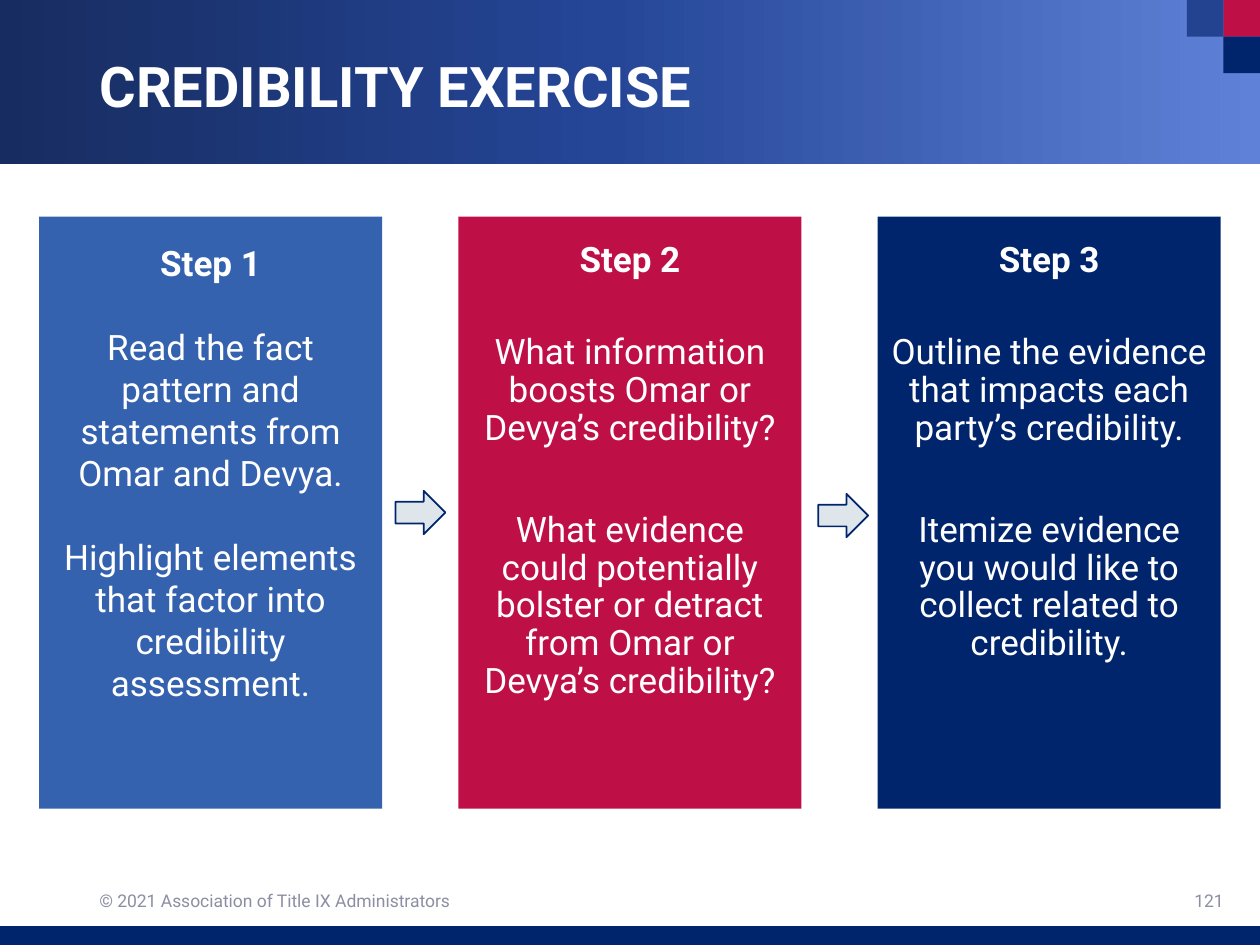
from copy import deepcopy
from dataclasses import dataclass

from pptx import Presentation
from pptx.dml.color import RGBColor
from pptx.enum.shapes import MSO_SHAPE
from pptx.enum.text import MSO_ANCHOR, MSO_AUTO_SIZE, PP_ALIGN
from pptx.oxml.ns import qn
from pptx.util import Pt

RECTANGLE, ARROW = MSO_SHAPE.RECTANGLE, MSO_SHAPE.RIGHT_ARROW
TOP, MIDDLE = MSO_ANCHOR.TOP, MSO_ANCHOR.MIDDLE
LEFT, CENTER, RIGHT = PP_ALIGN.LEFT, PP_ALIGN.CENTER, PP_ALIGN.RIGHT
NO_AUTOFIT = MSO_AUTO_SIZE.NONE

WHITE = RGBColor(0xFF, 0xFF, 0xFF)
NAVY = RGBColor(0x00, 0x25, 0x6D)
CRIMSON = RGBColor(0xBE, 0x10, 0x47)
BLUE = RGBColor(0x34, 0x62, 0xAE)
CORNER_BLUE = RGBColor(0x23, 0x42, 0x8F)
PALE = RGBColor(0xDF, 0xE6, 0xEB)
GREY = RGBColor(0x8C, 0x8E, 0xA3)
BAND_STOPS = (
    (0, RGBColor(0x17, 0x2C, 0x60)),
    (0.48, RGBColor(0x25, 0x46, 0x97)),
    (1, RGBColor(0x5F, 0x82, 0xD8)),
)

SLIDE_WIDTH, SLIDE_HEIGHT = 720, 540
CARD_WIDTH, CARD_HEIGHT, CARD_TOP = 196, 338.4, 123.8
CARD_PITCH = 239.6
CARD_LEFT = (SLIDE_WIDTH - 2 * CARD_PITCH - CARD_WIDTH) / 2
CORNER = 20.9
FOOTER_TOP, FOOTER_HEIGHT = 500.4, 28.8


@dataclass(frozen=True)
class Box:
    left: float
    top: float
    width: float
    height: float

    def lengths(self) -> tuple:
        return Pt(self.left), Pt(self.top), Pt(self.width), Pt(self.height)


@dataclass(frozen=True)
class Step:
    heading: str
    tasks: tuple
    fill: RGBColor
    line_spacing: float
    gaps: tuple


STEPS = (
    Step("Step 1",
         ("Read the fact pattern and statements from Omar and Devya.",
          "Highlight elements that factor into credibility assessment."),
         BLUE, 1.0, (24, 24)),
    Step("Step 2",
         ("What information boosts Omar or Devya’s credibility?",
          "What evidence could potentially bolster or detract from Omar or Devya’s credibility?"),
         CRIMSON, 0.9, (31.5, 36.6)),
    Step("Step 3",
         ("Outline the evidence that impacts each party’s credibility.",
          "Itemize evidence you would like to collect related to credibility."),
         NAVY, 0.9, (31.5, 36.6)),
)
ARROWS = (Box(226, 280.5, 28.5, 24.8), Box(467.6, 282.2, 28.5, 24.8))
CORNERS = (
    (Box(SLIDE_WIDTH - CORNER, 0, CORNER, CORNER), CRIMSON),
    (Box(SLIDE_WIDTH - 2 * CORNER, 0, CORNER, CORNER), CORNER_BLUE),
    (Box(SLIDE_WIDTH - CORNER, CORNER, CORNER, CORNER), NAVY),
)
FOOTERS = (
    ("© 2021 Association of Title IX Administrators",
     Box(49.7, FOOTER_TOP, 243.4, FOOTER_HEIGHT), LEFT),
    ("121", Box(544.3, FOOTER_TOP, 162, FOOTER_HEIGHT), RIGHT),
)


def apply(target, formats: dict) -> None:
    for name, value in formats.items():
        setattr(target, name, value)


def write(paragraph, text: str, size: float, color: RGBColor,
          bold: bool = False, **formats) -> None:
    run = paragraph.add_run()
    run.text = text
    apply(run.font, {"name": "Roboto", "size": Pt(size), "bold": bold})
    run.font.color.rgb = color
    apply(paragraph, formats)


def draw_shape(slide, kind, box: Box, fill: RGBColor):
    shape = slide.shapes.add_shape(kind, *box.lengths())
    shape.shadow.inherit = False
    shape.fill.solid()
    shape.fill.fore_color.rgb = fill
    shape.line.fill.background()
    return shape


def draw_band(slide) -> None:
    band = draw_shape(slide, RECTANGLE, Box(0, 0, SLIDE_WIDTH, 93.6), NAVY)
    band.fill.gradient()
    band.fill.gradient_angle = 0
    stop_list = band.element.find(".//" + qn("a:gsLst"))
    stop_list.insert(1, deepcopy(stop_list[0]))
    for stop, (position, color) in zip(band.fill.gradient_stops, BAND_STOPS):
        stop.position = position
        stop.color.rgb = color


def place_title(slide, text: str) -> None:
    title = slide.shapes.title
    title.element.getparent().append(title.element)
    apply(title, dict(zip(("left", "top", "width", "height"),
                          Box(49.7, 21.6, 620.6, 59).lengths())))
    apply(title.text_frame, {"vertical_anchor": MIDDLE, "word_wrap": True,
                             "auto_size": NO_AUTOFIT})
    write(title.text_frame.paragraphs[0], text, 32, WHITE, True,
          alignment=LEFT, line_spacing=0.9)


def draw_footer(slide, text: str, box: Box, alignment) -> None:
    frame = slide.shapes.add_textbox(*box.lengths()).text_frame
    apply(frame, {"vertical_anchor": MIDDLE, "word_wrap": True})
    write(frame.paragraphs[0], text, 10, GREY, alignment=alignment)


def draw_step(slide, step: Step, box: Box) -> None:
    frame = draw_shape(slide, RECTANGLE, box, step.fill).text_frame
    apply(frame, {"vertical_anchor": TOP, "word_wrap": True,
                  "margin_left": Pt(7.2), "margin_right": Pt(7.2),
                  "margin_top": Pt(14.4), "margin_bottom": Pt(3.6)})
    formats = {"alignment": CENTER, "line_spacing": step.line_spacing}
    write(frame.paragraphs[0], step.heading, 20, WHITE, True, **formats)
    for task, gap in zip(step.tasks, step.gaps):
        write(frame.add_paragraph(), task, 20, WHITE,
              space_before=Pt(gap), **formats)


def draw_arrow(slide, box: Box) -> None:
    arrow = draw_shape(slide, ARROW, box, PALE)
    arrow.line.color.rgb = NAVY
    arrow.line.width = Pt(1)


def main() -> None:
    deck = Presentation()
    apply(deck, {"slide_width": Pt(SLIDE_WIDTH), "slide_height": Pt(SLIDE_HEIGHT)})
    slide = deck.slides.add_slide(deck.slide_layouts.get_by_name("Title Only"))
    draw_band(slide)
    for box, color in CORNERS:
        draw_shape(slide, RECTANGLE, box, color)
    draw_shape(slide, RECTANGLE, Box(0, 529.2, SLIDE_WIDTH, 10.8), NAVY)
    place_title(slide, "CREDIBILITY EXERCISE")
    for text, box, alignment in FOOTERS:
        draw_footer(slide, text, box, alignment)
    for index, step in enumerate(STEPS):
        left = CARD_LEFT + index * CARD_PITCH
        draw_step(slide, step, Box(left, CARD_TOP, CARD_WIDTH, CARD_HEIGHT))
    for box in ARROWS:
        draw_arrow(slide, box)
    deck.save("out.pptx")


if __name__ == "__main__":
    main()
